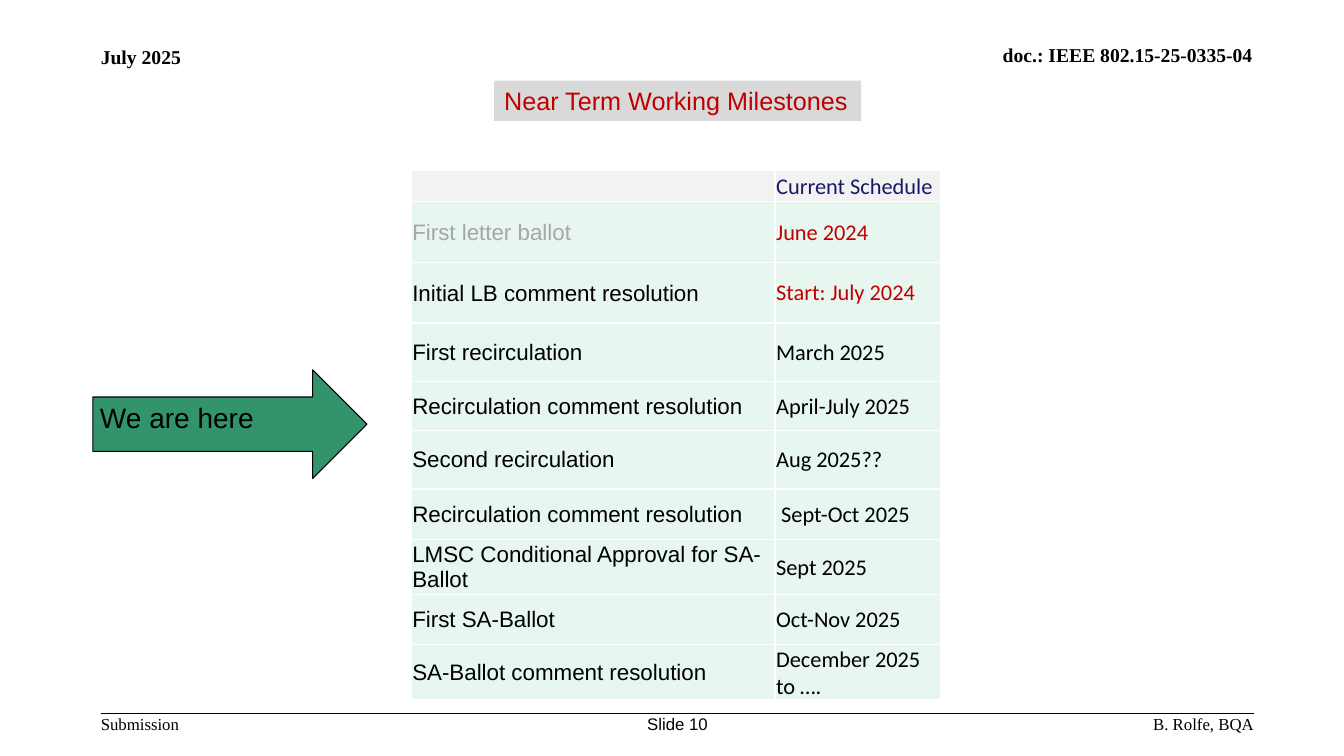
from lxml import etree
from pptx import Presentation
from pptx.dml.color import RGBColor
from pptx.enum.shapes import MSO_CONNECTOR, MSO_SHAPE
from pptx.enum.text import MSO_ANCHOR, PP_ALIGN
from pptx.oxml import parse_xml
from pptx.oxml.ns import nsdecls, qn
from pptx.util import Cm, Pt


def color(hex_value):
    return RGBColor.from_string(hex_value)


def write(frame, text, font, size, hex_value="000000", bold=False, align=PP_ALIGN.LEFT):
    """Fill a text frame or cell frame with one formatted paragraph."""
    frame.text = text
    paragraph = frame.paragraphs[0]
    paragraph.alignment = align
    paragraph.font.size = Pt(size)
    for run in paragraph.runs:
        run.font.name = font
        run.font.size = Pt(size)
        run.font.bold = bold
        run.font.color.rgb = color(hex_value)


presentation = Presentation()
presentation.slide_width = Cm(33.87)
presentation.slide_height = Cm(19.05)
slide = presentation.slides.add_slide(presentation.slide_layouts[5])
shapes = slide.shapes

# Header and footer
SERIF = "Times New Roman"
page_texts = [
    ("doc.: IEEE 802.15-25-0335-04", 15.8, 1.09, 15.77, 0.61, SERIF, 14, True, PP_ALIGN.RIGHT),
    ("July 2025", 2.54, 1.14, 5.64, 0.61, SERIF, 14, True, PP_ALIGN.LEFT),
    ("Submission", 2.54, 17.98, 2.64, 0.51, SERIF, 12, False, PP_ALIGN.LEFT),
    ("B. Rolfe, BQA", 23.42, 17.98, 8.18, 0.51, SERIF, 12, False, PP_ALIGN.RIGHT),
    ("Slide 10", 16.2, 17.98, 1.75, 0.51, "Arial", 12, False, PP_ALIGN.CENTER),
]
for text, left, top, width, height, font, size, bold, align in page_texts:
    frame = shapes.add_textbox(Cm(left), Cm(top), Cm(width), Cm(height)).text_frame
    frame.margin_left = frame.margin_right = frame.margin_top = frame.margin_bottom = 0
    frame.word_wrap = text != "Slide 10"
    write(frame, text, font, size, bold=bold, align=align)

footer_rule = shapes.add_connector(
    MSO_CONNECTOR.STRAIGHT, Cm(2.54), Cm(17.98), Cm(31.6), Cm(17.98))
footer_rule.line.color.rgb = color("000000")
footer_rule.line.width = Pt(1)
etree.SubElement(footer_rule._element.spPr, qn("a:effectLst"))

# Title
title = shapes.title
title.left, title.top, title.width, title.height = Cm(12.45), Cm(2.03), Cm(9.25), Cm(1.02)
title.fill.solid()
title.fill.fore_color.rgb = color("D9D9D9")
title.text_frame.word_wrap = False
title.text_frame.vertical_anchor = MSO_ANCHOR.TOP
write(title.text_frame, "Near Term Working Milestones", "Arial", 18, "C00000")

# Position marker
here_arrow = shapes.add_shape(MSO_SHAPE.RIGHT_ARROW, Cm(2.34), Cm(9.32), Cm(6.91), Cm(2.74))
here_arrow.shadow.inherit = False
here_arrow.fill.solid()
here_arrow.fill.fore_color.rgb = color("32946A")
here_arrow.line.color.rgb = color("000000")
here_arrow.line.width = Pt(0.75)
here_frame = here_arrow.text_frame
here_frame.margin_left = here_frame.margin_right = Cm(0.18)
here_frame.margin_top = here_frame.margin_bottom = Cm(0.1)
here_frame.vertical_anchor = MSO_ANCHOR.TOP
write(here_frame, "We are here", "Arial", 20)

# Milestones: name, name colour, date, date colour, row height
milestones = [
    ("", "000000", "Current Schedule", "191966", 0.79),
    ("First letter ballot", "A6A6A6", "June 2024", "C00000", 1.53),
    ("Initial LB comment resolution", "000000", "Start: July 2024", "C00000", 1.53),
    ("First recirculation", "000000", "March 2025", "000000", 1.47),
    ("Recirculation comment resolution", "000000", "April-July 2025", "000000", 1.23),
    ("Second recirculation", "000000", "Aug 2025??", "000000", 1.48),
    ("Recirculation comment resolution", "000000", " Sept-Oct 2025", "000000", 1.27),
    ("LMSC Conditional Approval for SA-Ballot", "000000", "Sept 2025", "000000", 1.27),
    ("First SA-Ballot", "000000", "Oct-Nov 2025", "000000", 1.27),
    ("SA-Ballot comment resolution", "000000", "December 2025 to ….", "000000", 1.07),
]
schedule = shapes.add_table(
    len(milestones), 2, Cm(10.36), Cm(4.29), Cm(13.34), Cm(12.91)).table
schedule.first_row = schedule.horz_banding = False
schedule.columns[0].width = Cm(9.17)
schedule.columns[1].width = Cm(4.17)

for row, (name, name_color, date, date_color, height) in enumerate(milestones):
    schedule.rows[row].height = Cm(height)
    entries = [(name, "Arial", name_color), (date, "Calibri", date_color)]
    for column, (text, font, text_color) in enumerate(entries):
        cell = schedule.cell(row, column)
        cell.margin_left = cell.margin_right = cell.margin_top = Cm(0.03)
        cell.margin_bottom = 0
        cell.vertical_anchor = MSO_ANCHOR.MIDDLE
        write(cell.text_frame, text, font, 16, text_color)
        for side in ("lnL", "lnR", "lnT", "lnB"):
            cell._tc.get_or_add_tcPr().append(parse_xml(
                f'<a:{side} {nsdecls("a")} w="12700"><a:solidFill>'
                f'<a:srgbClr val="FFFFFF"/></a:solidFill></a:{side}>'))
        cell.fill.solid()
        cell.fill.fore_color.rgb = color("E7F6EF" if row else "F2F2F2")

presentation.save("out.pptx")
